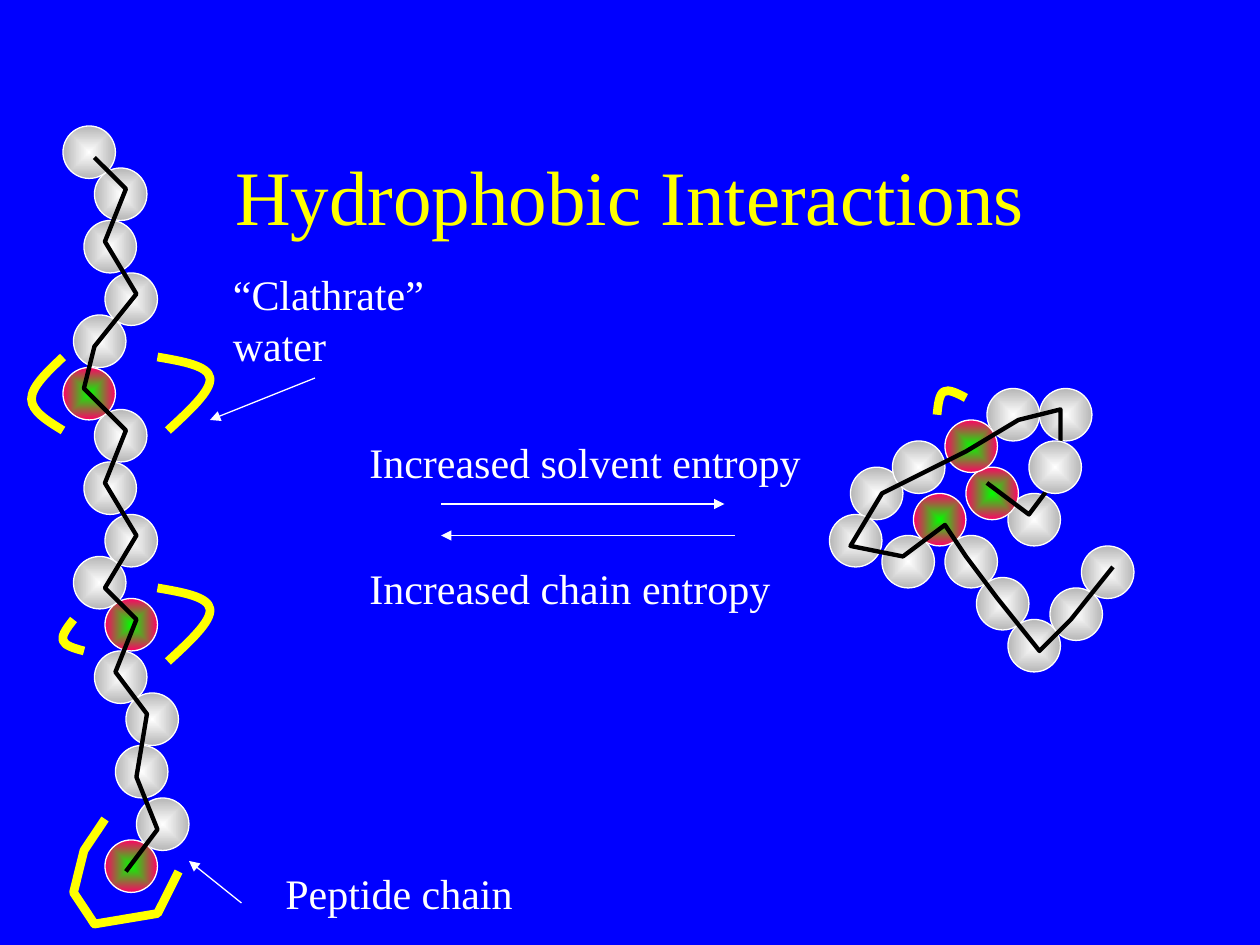
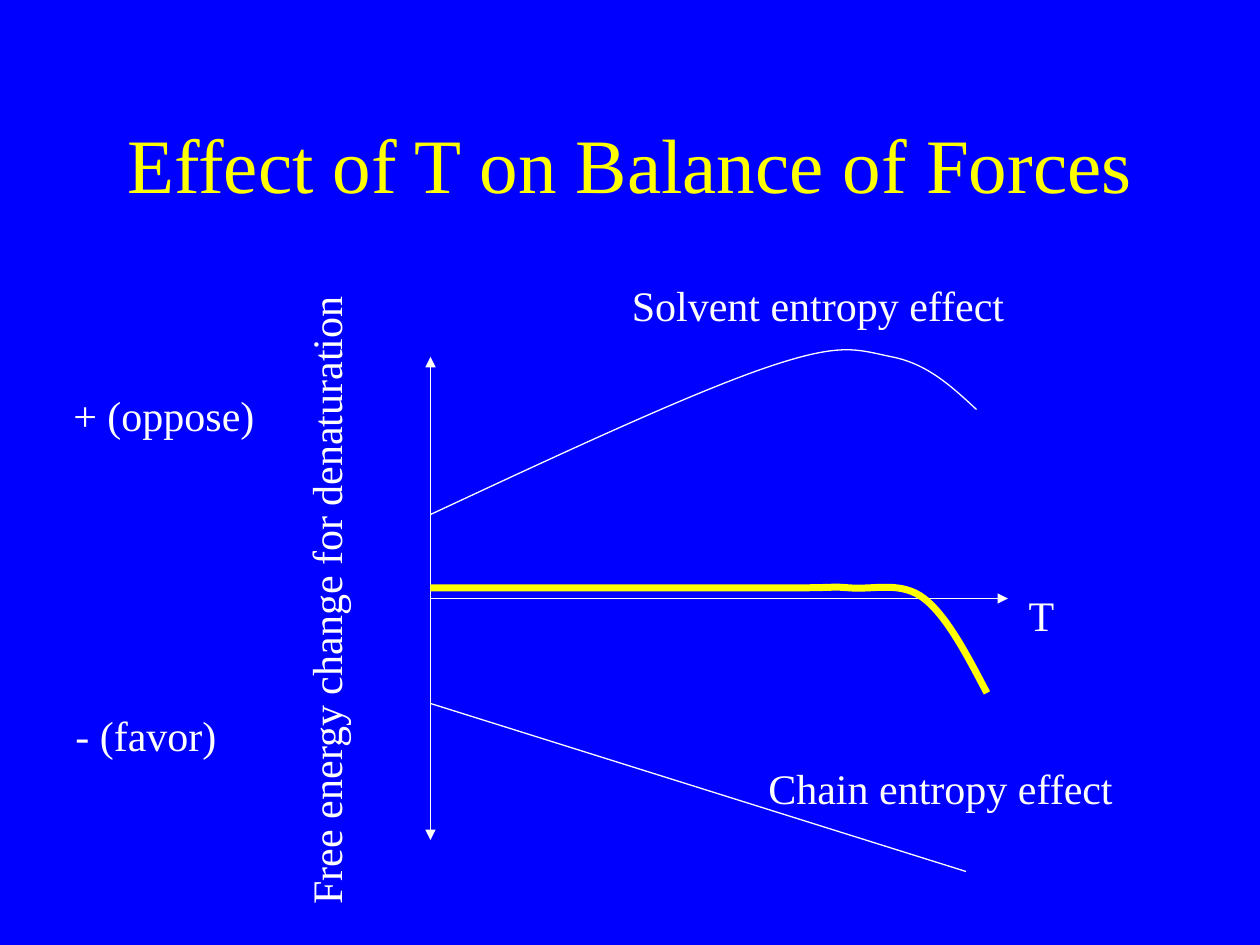
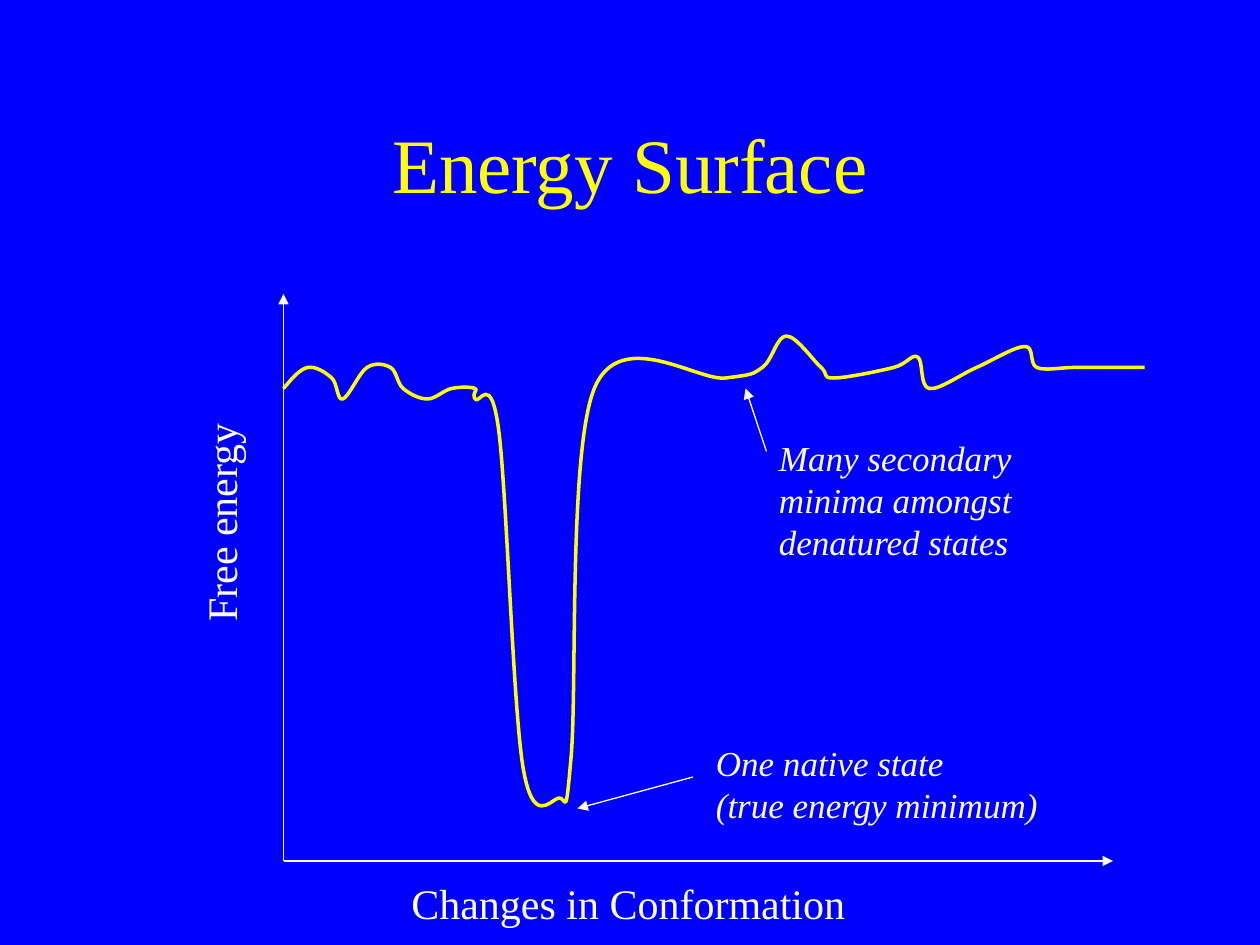
import pptx
import pptx.util
import pptx.dml.color
import pptx.enum.shapes
import pptx.enum.text
import pptx.oxml
import pptx.oxml.ns

GRID = 2.54 / 12  # all positions lie on a grid of twelve steps to the inch
FONT = "Times New Roman"
BLUE, WHITE, YELLOW, BLACK = "0000FF", "FFFFFF", "FFFF00", "000000"
POLAR = (WHITE, "B6B6B6")
HYDROPHOBIC = ("00FF00", "FF0066")
BEAD_SIZE = 5

EXTENDED_BEADS = [
    (13, 76, POLAR), (11, 71, POLAR), (12, 66, POLAR), (9, 62, POLAR),
    (10, 80, HYDROPHOBIC), (10, 57, HYDROPHOBIC), (10, 49, POLAR), (8, 44, POLAR),
    (9, 39, POLAR), (6, 35, HYDROPHOBIC), (7, 53, POLAR), (10, 26, POLAR),
    (8, 21, POLAR), (9, 16, POLAR), (6, 12, POLAR), (7, 30, POLAR)]
EXTENDED_BACKBONE = [
    (12, 83), (15, 79), (13, 74), (14, 68), (11, 64), (13, 59), (10, 56), (13, 51),
    (10, 46), (12, 41), (8, 37), (9, 33), (13, 28), (10, 23), (12, 18), (9, 15)]
FOLDED_BEADS = [
    (96, 47, POLAR), (99, 37, POLAR), (94, 37, POLAR), (92, 44.5, HYDROPHOBIC),
    (90, 40, HYDROPHOBIC), (81, 44.5, POLAR), (79, 49, POLAR), (84, 51, POLAR),
    (87, 47, HYDROPHOBIC), (85, 42, POLAR), (93, 55, POLAR), (96, 59, POLAR),
    (100, 56, POLAR), (103, 52, POLAR), (90, 51, POLAR)]
FOLDED_BACKBONE = [
    (94, 46), (98, 49), (101, 45), (101, 39), (97, 40), (92, 43), (88, 45), (84, 47),
    (81, 52), (86, 53), (90, 50), (92, 53), (95, 57), (99, 62), (102, 59), (106, 54)]
CLATHRATE_ARCS = [
    [(16, 63), (20, 58), (15, 56)],
    [(16, 41), (20, 36), (15, 34)],
    [(8, 62), (6, 61), (7, 59)],
    [(6, 41), (3, 38), (6, 34)],
    [(89.25, 39.5), (89.9, 37.3), (92, 37.9)]]
CLATHRATE_CUP = [(17, 83), (15, 87), (9, 88), (7, 85), (8, 81), (10, 78)]
SOLVENT_EFFECT = [(41, 49), (73, 35), (85, 34), (93, 39)]
NET_EFFECT = [(41, 56), (74, 56), (81, 56), (88, 57), (94, 66)]
ENERGY_SURFACE = [
    (27, 37), (29.3, 35), (31.6, 36), (32.65, 38), (34.95, 35), (37.2, 35), (38.4, 37),
    (40.7, 38), (43, 37), (45.25, 37), (45.25, 38), (47.5, 41), (49.8, 73), (53.2, 76),
    (54.4, 72), (56.6, 37), (69.1, 36), (72.6, 35), (74.9, 32), (78.2, 35), (79.4, 36),
    (85.1, 35), (87.4, 34), (88.5, 37), (93, 35), (97.6, 33), (98.75, 35), (102.2, 35),
    (105.6, 35), (107.9, 35), (109, 35)]


def grid(*steps):
    return [pptx.util.Cm(step * GRID) for step in steps]


def rgb(color):
    return pptx.dml.color.RGBColor.from_string(color)


def add_element(parent, tag, **attributes):
    element = pptx.oxml.parse_xml(f"<{tag} {pptx.oxml.ns.nsdecls('a')}/>")
    for name, value in attributes.items():
        element.set(name, value)
    parent.append(element)
    return element


def style_line(line, color, width):
    line.color.rgb = rgb(color)
    line.width = pptx.util.Pt(width)


def style_text(frame, size, color, italic=False):
    for paragraph in frame.paragraphs:
        font = paragraph.font
        font.name, font.size, font.italic = FONT, pptx.util.Pt(size), italic
        font.color.rgb = rgb(color)


def add_slide(prs, title, top=8):
    slide = prs.slides.add_slide(prs.slide_layouts[5])
    heading = slide.shapes.title
    heading.left, heading.top, heading.width, heading.height = grid(9, top, 102, 15)
    heading.text_frame.text = title
    heading.text_frame.vertical_anchor = pptx.enum.text.MSO_ANCHOR.MIDDLE
    heading.text_frame.paragraphs[0].alignment = pptx.enum.text.PP_ALIGN.CENTER
    style_text(heading.text_frame, 44, YELLOW)
    return slide.shapes


def add_label(shapes, text, left, top, width, height=6, size=24,
              wrap=False, italic=False, rotation=0):
    label = shapes.add_textbox(*grid(left, top, width, height))
    label.rotation = rotation
    frame = label.text_frame
    frame.text = text
    frame.word_wrap = wrap
    frame.auto_size = pptx.enum.text.MSO_AUTO_SIZE.SHAPE_TO_FIT_TEXT
    style_text(frame, size, WHITE, italic)


def add_line(shapes, start, end, arrows=("tailEnd",)):
    connector = shapes.add_connector(
        pptx.enum.shapes.MSO_CONNECTOR.STRAIGHT, *grid(*start, *end))
    style_line(connector.line, WHITE, 0.75)
    properties = connector._element.spPr
    for arrow in arrows:
        add_element(properties.find(pptx.oxml.ns.qn("a:ln")), f"a:{arrow}", type="triangle")
    add_element(properties, "a:effectLst")


def add_bead(shapes, left, top, colors):
    bead = shapes.add_shape(pptx.enum.shapes.MSO_SHAPE.OVAL,
                            *grid(left, top, BEAD_SIZE, BEAD_SIZE))
    bead.shadow.inherit = False
    bead.fill.gradient()
    for stop, color in zip(bead.fill.gradient_stops, colors):
        stop.color.rgb = rgb(color)
    gradient = bead._element.spPr.find(pptx.oxml.ns.qn("a:gradFill"))
    gradient.remove(gradient.find(pptx.oxml.ns.qn("a:lin")))
    radial = add_element(gradient, "a:path", path="shape")
    add_element(radial, "a:fillToRect", l="50000", t="50000", r="50000", b="50000")
    style_line(bead.line, WHITE, 0.75)


def add_polyline(shapes, points, color, width):
    start, *rest = [grid(*point) for point in points]
    builder = shapes.build_freeform(*start)
    builder.add_line_segments(rest, close=False)
    outline = builder.convert_to_shape()
    outline.shadow.inherit = False
    outline.fill.background()
    style_line(outline.line, color, width)
    return outline


def spline_points(knots):
    """Return the knots with two Bezier control points between neighbours."""
    slopes = [((c[0] - a[0]) / 6, (c[1] - a[1]) / 6) for a, c in zip(knots, knots[2:])]
    before = [(x - dx, y - dy) for (x, y), (dx, dy) in zip(knots[1:], slopes)]
    after = [(x + dx, y + dy) for (x, y), (dx, dy) in zip(knots[1:], slopes)]

    def middle(a, b):
        return (a[0] + b[0]) / 2, (a[1] + b[1]) / 2

    leaving = [middle(knots[0], before[0])] + after
    arriving = before + [middle(after[-1], knots[-1])]
    points = [knots[0]]
    for segment in zip(leaving, arriving, knots[1:]):
        points.extend(segment)
    return points


def add_curve(shapes, knots, color, width):
    """Draw a smooth curve through the knots."""
    outline = add_polyline(shapes, spline_points(knots), color, width)
    track = outline._element.xpath(".//a:path")[0]
    segments = track.findall(pptx.oxml.ns.qn("a:lnTo"))
    for first in range(0, len(segments), 3):
        bezier = add_element(track, "a:cubicBezTo")
        for segment in segments[first:first + 3]:
            bezier.append(segment[0])
            track.remove(segment)


def add_chain(shapes, beads, backbone):
    for bead in beads:
        add_bead(shapes, *bead)
    add_polyline(shapes, backbone, BLACK, 2.5)


def build_interactions(prs):
    shapes = add_slide(prs, "Hydrophobic Interactions", top=11)
    add_chain(shapes, EXTENDED_BEADS, EXTENDED_BACKBONE)
    folded = shapes.add_group_shape().shapes
    add_chain(folded, FOLDED_BEADS, FOLDED_BACKBONE)
    add_bead(folded, 98, 42, POLAR)
    for arc in CLATHRATE_ARCS:
        add_curve(shapes, arc, YELLOW, 5)
    add_polyline(shapes, CLATHRATE_CUP, YELLOW, 5)
    add_label(shapes, "“Clathrate” water", 21, 25, 27, 10.8, wrap=True)
    add_line(shapes, (30, 36), (20, 40))
    add_label(shapes, "Peptide chain", 26, 82, 24.5)
    add_line(shapes, (23, 86), (18, 82))
    add_label(shapes, "Increased solvent entropy", 34, 41, 44)
    add_line(shapes, (42, 48), (69, 48))
    add_line(shapes, (70, 51), (42, 51))
    add_label(shapes, "Increased chain entropy", 34, 53, 41)


def build_balance(prs):
    shapes = add_slide(prs, "Effect of T on Balance of Forces")
    add_line(shapes, (41, 80), (41, 34), arrows=("headEnd", "tailEnd"))
    add_line(shapes, (41, 57), (96, 57))
    add_label(shapes, "Free energy change for denaturation", 0.8, 54.1, 60.4, rotation=270)
    add_curve(shapes, SOLVENT_EFFECT, WHITE, 0.75)
    add_line(shapes, (41, 67), (92, 83), arrows=())
    add_curve(shapes, NET_EFFECT, YELLOW, 4)
    add_label(shapes, "T", 96.8, 55.6, 4.8)
    add_label(shapes, "+ (oppose)", 5.8, 36.5, 19.7)
    add_label(shapes, "- (favor)", 6, 67, 15.8)
    add_label(shapes, "Chain entropy effect", 72, 72, 35.3)
    add_label(shapes, "Solvent entropy effect", 59, 26, 37.9)


def build_surface(prs):
    shapes = add_slide(prs, "Energy Surface")
    add_line(shapes, (27, 82), (27, 28))
    add_line(shapes, (27, 82), (106, 82))
    add_curve(shapes, ENERGY_SURFACE, YELLOW, 2)
    add_label(shapes, "Changes in Conformation", 38, 83, 43.7)
    add_label(shapes, "Free energy", 10.3, 46.7, 21.4, rotation=270)
    add_line(shapes, (66, 74), (55, 77))
    add_label(shapes, "One native state\n(true energy minimum)", 67, 70, 33.1, 9.2,
              size=20, wrap=True, italic=True)
    add_label(shapes, "Many secondary minima amongst denatured states", 73, 41, 34.2, 13.2,
              size=20, wrap=True, italic=True)
    add_line(shapes, (73, 43), (71, 37))


def main():
    prs = pptx.Presentation()
    prs.slide_width, prs.slide_height = grid(120, 90)
    background = prs.slide_master.background.fill
    background.solid()
    background.fore_color.rgb = rgb(BLUE)
    build_interactions(prs)
    build_balance(prs)
    build_surface(prs)
    prs.save("out.pptx")


if __name__ == "__main__":
    main()
